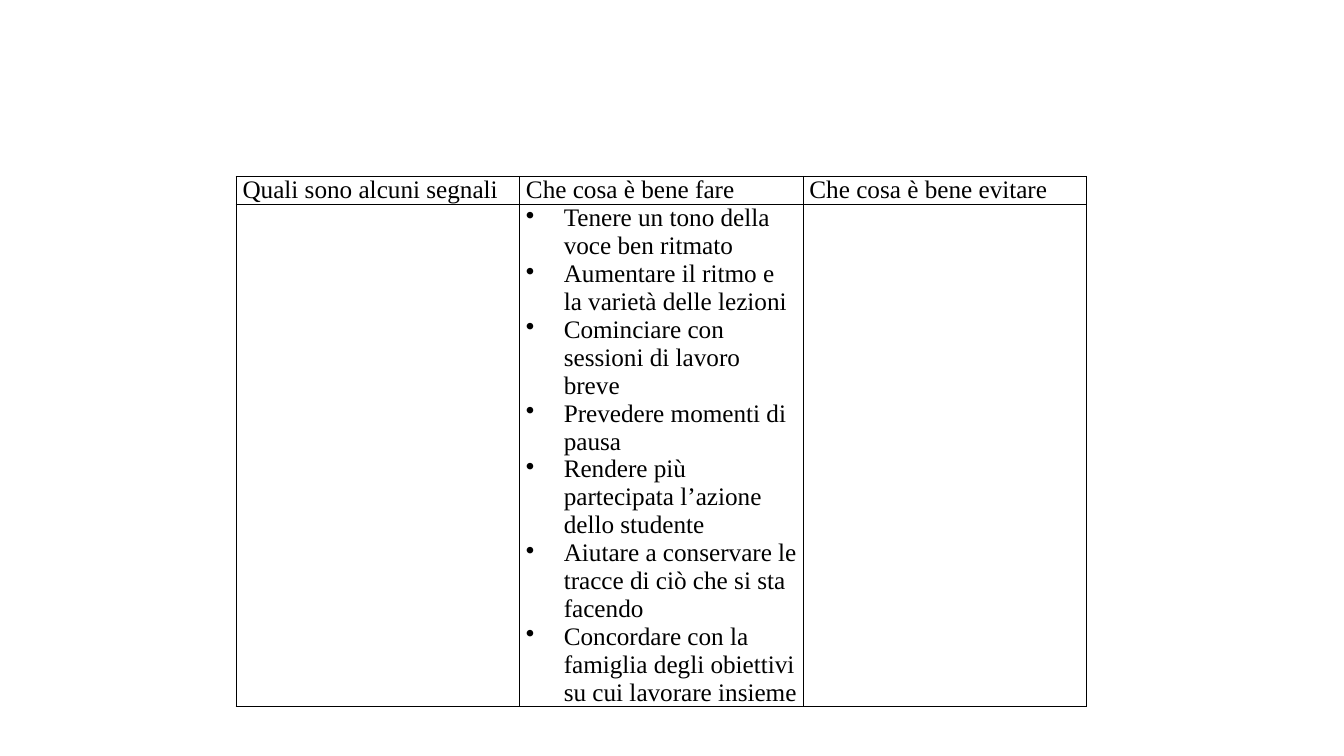
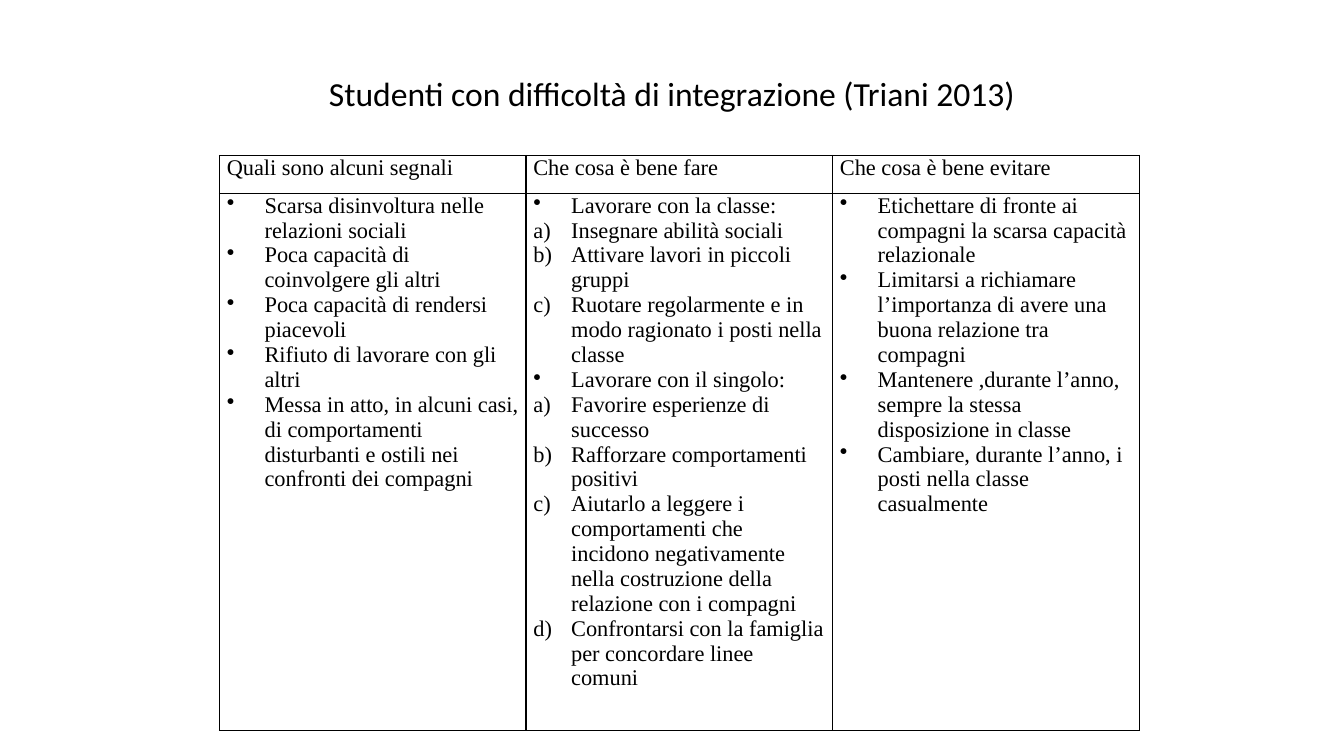
"""Build two slides of classroom guidance tables with python-pptx."""
from dataclasses import dataclass

from lxml.etree import SubElement as Sub
from pptx import Presentation
from pptx.dml.color import RGBColor
from pptx.enum.text import MSO_ANCHOR as Anchor, PP_ALIGN as Align
from pptx.oxml.ns import qn
from pptx.util import Pt

PX = 9525
BLACK = "000000"
TITLE_FONT, TABLE_FONT = "Calibri", "Times New Roman"
HEADERS = ("Quali sono alcuni segnali", "Che cosa è bene fare", "Che cosa è bene evitare")
INDENT, TAB, BORDER = 36, 48, Pt(1)


@dataclass(frozen=True)
class Item:
    text: str
    lettered: bool = False


@dataclass(frozen=True)
class GuideTable:
    left: int
    top: int
    col_width: int
    row_heights: tuple[int, int]
    margin: int
    size: int
    columns: tuple[list[Item], ...]


def px(n: int) -> int:
    return n * PX


def rgb(color: str) -> RGBColor:
    return RGBColor.from_string(color)


def bullets(*texts: str) -> list[Item]:
    return [Item(t) for t in texts]


def letters(*texts: str) -> list[Item]:
    return [Item(t, True) for t in texts]


def style(p, font: str, size: int) -> None:
    p.font.name, p.font.size = font, Pt(size)
    p.font.color.rgb = rgb(BLACK)


def add_marker(p, lettered: bool) -> None:
    pPr = p._p.get_or_add_pPr()
    pPr.set("marL", str(px(INDENT)))
    pPr.set("indent", str(-px(INDENT)))
    if lettered:
        Sub(pPr, qn("a:buAutoNum"), type="alphaLcParenR")
    else:
        Sub(pPr, qn("a:buChar"), char="•")
    Sub(Sub(pPr, qn("a:tabLst")), qn("a:tab"), pos=str(px(TAB)), algn="l")


def format_cell(cell, margin: int) -> None:
    tcPr = cell._tc.get_or_add_tcPr()
    for side in ("lnL", "lnR", "lnT", "lnB"):
        ln = Sub(tcPr, qn(f"a:{side}"), w=str(BORDER))
        Sub(Sub(ln, qn("a:solidFill")), qn("a:srgbClr"), val=BLACK)
    cell.fill.background()
    cell.margin_left = cell.margin_right = px(margin)
    cell.margin_top = cell.margin_bottom = 0


def add_title(s, text: str) -> None:
    tf = s.shapes.add_textbox(px(64), px(29), px(1152), px(120)).text_frame
    tf.word_wrap = True
    tf.vertical_anchor = Anchor.MIDDLE
    p = tf.paragraphs[0]
    p.text, p.alignment = text, Align.CENTER
    style(p, TITLE_FONT, 24)


def add_guide(s, guide: GuideTable) -> None:
    table = s.shapes.add_table(
        2, len(HEADERS), px(guide.left), px(guide.top),
        px(guide.col_width * len(HEADERS)), px(sum(guide.row_heights))).table
    table.first_row = table.horz_banding = False
    for row, height in zip(table.rows, guide.row_heights):
        row.height = px(height)
    for i, (header, items) in enumerate(zip(HEADERS, guide.columns)):
        table.columns[i].width = px(guide.col_width)
        head, body = table.cell(0, i), table.cell(1, i)
        head.text = header
        body.text = "\n".join(item.text for item in items)
        for p, item in zip(body.text_frame.paragraphs, items):
            add_marker(p, item.lettered)
        for cell in (head, body):
            format_cell(cell, guide.margin)
            for p in cell.text_frame.paragraphs:
                style(p, TABLE_FONT, guide.size)


RHYTHM = GuideTable(225, 168, 270, (14, 461), 6, 18, (
    [],
    bullets(
        "Tenere un tono della voce ben ritmato",
        "Aumentare il ritmo e la varietà delle lezioni",
        "Cominciare con sessioni di lavoro breve",
        "Prevedere momenti di pausa",
        "Rendere più partecipata l’azione dello studente",
        "Aiutare a conservare le tracce di ciò che si sta facendo",
        "Concordare con la famiglia degli obiettivi su cui lavorare insieme"),
    [],
))

INTEGRATION = GuideTable(209, 148, 292, (36, 494), 7, 16, (
    bullets(
        "Scarsa disinvoltura nelle relazioni sociali",
        "Poca capacità di coinvolgere gli altri",
        "Poca capacità di rendersi piacevoli",
        "Rifiuto di lavorare con gli altri",
        "Messa in atto, in alcuni casi, di comportamenti disturbanti e ostili "
        "nei confronti dei compagni"),
    bullets("Lavorare con la classe:")
    + letters(
        "Insegnare abilità sociali",
        "Attivare lavori in piccoli gruppi",
        "Ruotare regolarmente e in modo ragionato i posti nella classe")
    + bullets("Lavorare con il singolo:")
    + letters(
        "Favorire esperienze di successo",
        "Rafforzare comportamenti positivi",
        "Aiutarlo a leggere i comportamenti che incidono negativamente "
        "nella costruzione della relazione con i compagni",
        "Confrontarsi con la famiglia per concordare linee comuni"),
    bullets(
        "Etichettare di fronte ai compagni la scarsa capacità relazionale",
        "Limitarsi a richiamare l’importanza di avere una buona relazione tra compagni",
        "Mantenere ,durante l’anno, sempre la stessa disposizione in classe",
        "Cambiare, durante l’anno, i posti nella classe casualmente"),
))


def main() -> None:
    prs = Presentation()
    prs.slide_width, prs.slide_height = px(1280), px(720)
    blank = prs.slide_layouts[6]
    add_guide(prs.slides.add_slide(blank), RHYTHM)
    s = prs.slides.add_slide(blank)
    add_title(s, "Studenti con difficoltà di integrazione (Triani 2013)")
    add_guide(s, INTEGRATION)
    prs.save("out.pptx")


if __name__ == "__main__":
    main()
